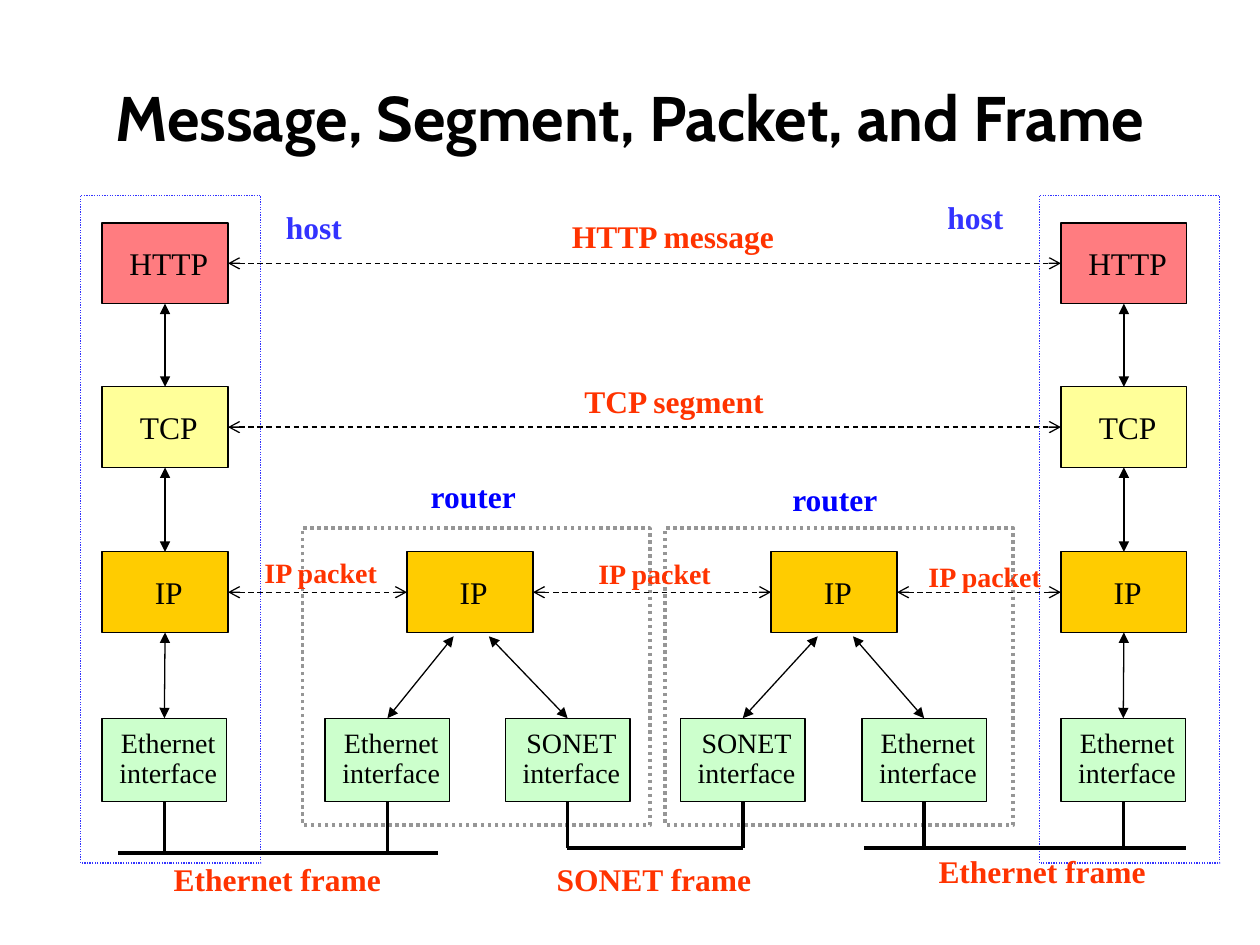
from dataclasses import dataclass
from typing import NamedTuple, Optional

from pptx import Presentation
from pptx.dml.color import RGBColor
from pptx.enum.dml import MSO_LINE
from pptx.enum.shapes import MSO_CONNECTOR, MSO_SHAPE
from pptx.enum.text import MSO_ANCHOR, MSO_AUTO_SIZE, PP_ALIGN
from pptx.oxml.ns import qn
from pptx.shapes.autoshape import Shape
from pptx.shapes.connector import Connector
from pptx.util import Inches, Pt
from lxml.etree import SubElement


@dataclass(frozen=True)
class Theme:
    head: str = "Cabin"
    body: str = "Times New Roman"
    black: str = "000000"
    red: str = "FF3300"
    host: str = "3333FF"
    router: str = "0000FF"
    grey: str = "969696"
    http: str = "FF7C80"
    tcp: str = "FFFF99"
    ip: str = "FFCC00"
    face: str = "CCFFCC"
    title: int = 36
    big: int = 18
    small: int = 16
    thin: float = 0.75
    thick: float = 2


class Label(NamedTuple):
    text: str
    x: float
    y: float
    width: float
    color: str
    size: int = 18


class Router(NamedTuple):
    frame: float
    ip: float
    faces: tuple[tuple[str, float], tuple[str, float]]


class Bus(NamedTuple):
    left: float
    right: float
    y: float
    ends: tuple[Shape, Shape]


Point = tuple[float, float]
TOP, LEFT, BOTTOM, RIGHT = range(4)
THEME = Theme()
IP_Y, FACE_Y = 4.38, 5.7
LAYERS = (("HTTP", 1.77, THEME.http), ("TCP", 3.07, THEME.tcp), ("IP", IP_Y, THEME.ip))
ROUTERS = (
    Router(2.4, 3.23, (("Ethernet", 2.58), ("SONET", 4.01))),
    Router(5.28, 6.12, (("SONET", 5.4), ("Ethernet", 6.84))),
)
LABELS = (
    Label("host", 2.17, 1.6, 0.65, THEME.host),
    Label("host", 7.42, 1.52, 0.65, THEME.host),
    Label("router", 3.32, 3.74, 0.88, THEME.router),
    Label("router", 6.19, 3.76, 0.88, THEME.router),
    Label("HTTP message", 4.44, 1.67, 1.82, THEME.red),
    Label("TCP segment", 4.54, 2.98, 1.64, THEME.red),
    Label("IP packet", 2, 4.36, 1.11, THEME.red, THEME.small),
    Label("IP packet", 4.65, 4.37, 1.11, THEME.red, THEME.small),
    Label("IP packet", 7.27, 4.39, 1.11, THEME.red, THEME.small),
    Label("Ethernet frame", 1.28, 6.78, 1.85, THEME.red),
    Label("SONET frame", 4.32, 6.78, 1.75, THEME.red),
    Label("Ethernet frame", 7.35, 6.71, 1.85, THEME.red),
)

deck = Presentation()
deck.slide_width, deck.slide_height = Inches(10), Inches(7.5)
slide = deck.slides.add_slide(deck.slide_layouts[5])
shapes = slide.shapes


def rgb(code: str) -> RGBColor:
    return RGBColor.from_string(code)


def style(font, size: int, color: str, bold: bool = False, name: str = THEME.body) -> None:
    font.name, font.size, font.bold = name, Pt(size), bold
    font.color.rgb = rgb(color)


def rect(x: float, y: float, w: float, h: float, color: str, width: float) -> Shape:
    """Draw an outlined rectangle without fill."""
    shape = shapes.add_shape(MSO_SHAPE.RECTANGLE, Inches(x), Inches(y), Inches(w), Inches(h))
    shape.shadow.inherit = False
    shape.fill.background()
    shape.line.color.rgb = rgb(color)
    shape.line.width = Pt(width)
    return shape


def frame(x: float, y: float, w: float, h: float, color: str, width: float) -> None:
    rect(x, y, w, h, color, width).line.dash_style = MSO_LINE.ROUND_DOT


def box(lines: list[str], x: float, y: float, w: float, h: float, fill: str,
        size: int, space: float = 1) -> Shape:
    shape = rect(x, y, w, h, THEME.black, THEME.thin)
    shape.fill.solid()
    shape.fill.fore_color.rgb = rgb(fill)
    text = shape.text_frame
    text.word_wrap = False
    text.vertical_anchor = MSO_ANCHOR.MIDDLE
    text.margin_left = Inches(0.06)
    text.margin_right = text.margin_top = text.margin_bottom = 0
    text.text = "\n".join(lines)
    for para in text.paragraphs:
        para.alignment = PP_ALIGN.CENTER
        para.line_spacing = space
        style(para.font, size, THEME.black)
    return shape


def layer(name: str, x: float, y: float, fill: str) -> Shape:
    return box([name], x, y, 1, 0.64, fill, THEME.big)


def face(kind: str, x: float) -> Shape:
    return box([kind, "interface"], x, FACE_Y, 0.99, 0.66, THEME.face, THEME.small, 0.9)


def line(start: Point, end: Point, width: float = THEME.thin,
         arrow: Optional[str] = None, dash: bool = False) -> Connector:
    """Draw a line, with the given arrowhead at both ends if any."""
    link = shapes.add_connector(MSO_CONNECTOR.STRAIGHT, *map(Inches, start + end))
    link.line.color.rgb = rgb(THEME.black)
    link.line.width = Pt(width)
    if dash:
        link.line.dash_style = MSO_LINE.DASH
    if arrow:
        for tag in ("a:headEnd", "a:tailEnd"):
            SubElement(link.line._get_or_add_ln(), qn(tag), type=arrow)
    SubElement(link._element.spPr, qn("a:effectLst"))
    return link


def join(first: Shape, out: int, last: Shape, into: int, arrow: str, dash: bool = False) -> None:
    link = line((0, 0), (0, 0), arrow=arrow, dash=dash)
    link.begin_connect(first, out)
    link.end_connect(last, into)


def host(x: float) -> list[Shape]:
    """Draw a host's stack and return its boxes from top to bottom."""
    frame(x - 0.17, 1.55, 1.43, 5.3, THEME.host, THEME.thin)
    stack = [layer(name, x, y, fill) for name, y, fill in LAYERS]
    stack.append(face("Ethernet", x))
    for upper, lower in zip(stack, stack[1:]):
        join(upper, BOTTOM, lower, TOP, "triangle")
    return stack


def router(item: Router) -> tuple[Shape, list[Shape]]:
    """Draw a router and return its IP box and its interfaces."""
    frame(item.frame, 4.19, 2.76, 2.36, THEME.grey, THEME.thick)
    core = layer("IP", item.ip, IP_Y, THEME.ip)
    ports = [face(kind, x) for kind, x in item.faces]
    for port, shift in zip(ports, (0.37, 0.65)):
        foot = (item.ip + shift, 5.05)
        line(foot, foot, arrow="triangle").end_connect(port, TOP)
    return core, ports


def cable(bus: Bus) -> None:
    line((bus.left, bus.y), (bus.right, bus.y), THEME.thick)
    for port in bus.ends:
        x = (port.left + port.width / 2) / Inches(1)
        line((x, bus.y), (x, bus.y), THEME.thick).begin_connect(port, BOTTOM)


def label(item: Label) -> None:
    area = shapes.add_textbox(Inches(item.x), Inches(item.y), Inches(item.width), Inches(0.4))
    text = area.text_frame
    text.word_wrap = False
    text.auto_size = MSO_AUTO_SIZE.SHAPE_TO_FIT_TEXT
    text.text = item.text
    style(text.paragraphs[0].font, item.size, item.color, True)


def main() -> None:
    title = shapes.title
    title.left, title.top, title.width, title.height = map(Inches, (0.5, 0.3, 9, 1.25))
    title.text_frame.text = "Message, Segment, Packet, and Frame"
    title.text_frame.vertical_anchor = MSO_ANCHOR.MIDDLE
    para = title.text_frame.paragraphs[0]
    para.alignment = PP_ALIGN.CENTER
    style(para.font, THEME.title, THEME.black, True, THEME.head)

    near, far = host(0.81), host(8.42)
    (core1, ports1), (core2, ports2) = map(router, ROUTERS)
    hops = [near[2], core1, core2, far[2]]
    for a, b in [*zip(near[:2], far[:2]), *zip(hops, hops[1:])]:
        join(a, RIGHT, b, LEFT, "arrow", True)
    for bus in (
        Bus(0.94, 3.48, 6.77, (near[3], ports1[0])),
        Bus(4.5, 5.9, 6.73, (ports1[1], ports2[0])),
        Bus(6.86, 9.41, 6.73, (ports2[1], far[3])),
    ):
        cable(bus)
    for item in LABELS:
        label(item)
    deck.save("out.pptx")


if __name__ == "__main__":
    main()
